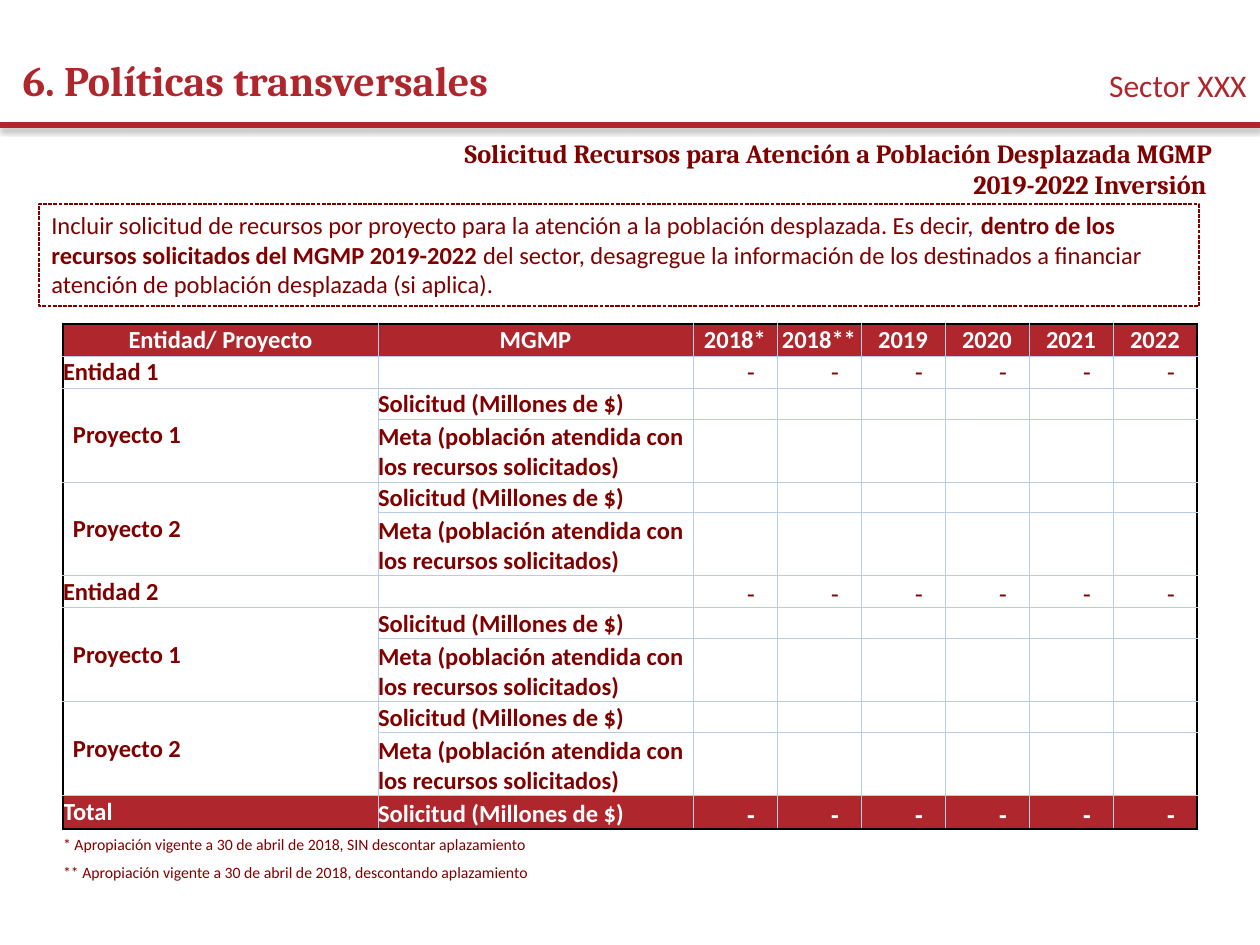
from dataclasses import dataclass

from lxml import etree
from pptx import Presentation
from pptx.dml.color import RGBColor
from pptx.enum.dml import MSO_LINE
from pptx.enum.shapes import MSO_CONNECTOR, MSO_SHAPE
from pptx.enum.text import MSO_ANCHOR, PP_ALIGN
from pptx.oxml.ns import qn
from pptx.util import Emu, Pt

LEFT, CENTER, RIGHT = PP_ALIGN.LEFT, PP_ALIGN.CENTER, PP_ALIGN.RIGHT
TOP, MIDDLE, BOTTOM = MSO_ANCHOR.TOP, MSO_ANCHOR.MIDDLE, MSO_ANCHOR.BOTTOM
DASH = MSO_LINE.SQUARE_DOT
STRAIGHT, RECT = MSO_CONNECTOR.STRAIGHT, MSO_SHAPE.RECTANGLE


@dataclass(frozen=True)
class Theme:
    red: str = "AF272D"
    maroon: str = "800000"
    white: str = "FFFFFF"
    grid: str = "B8CCE4"
    frame: str = "000000"
    heading: str = "Cambria"
    body: str = "Calibri"
    figures: str = "Arial"
    title: int = 24
    sector: int = 18
    subtitle: int = 15
    text: int = 14
    note: int = 9


T = Theme()


@dataclass(frozen=True)
class Style:
    size: int = T.text
    font: str = T.body
    color: str = T.maroon
    bold: bool = False


@dataclass(frozen=True)
class Cell:
    text: str = ""
    style: Style = Style(bold=True)
    align: PP_ALIGN = LEFT
    anchor: MSO_ANCHOR = MIDDLE
    indent: int = 0
    fill: str | None = None


@dataclass(frozen=True)
class Row:
    height: int
    cells: list[Cell]
    framed: bool = True


def px(n: int) -> Emu:
    return Emu(round(n * 914400 / 126))


def rgb(color: str) -> RGBColor:
    return RGBColor.from_string(color)


def add_run(p, text: str, style: Style) -> None:
    r = p.add_run()
    r.text = text
    r.font.size = Pt(style.size)
    r.font.name = style.font
    r.font.bold = style.bold
    r.font.color.rgb = rgb(style.color)


def fill_text(sp, runs: list[tuple[str, Style]], align: PP_ALIGN, anchor: MSO_ANCHOR) -> None:
    tf = sp.text_frame
    tf.word_wrap = True
    tf.vertical_anchor = anchor
    p = tf.paragraphs[0]
    p.alignment = align
    for text, style in runs:
        add_run(p, text, style)


def add_border(tc_pr, side: str, color: str | None, width: float) -> None:
    ln = etree.SubElement(tc_pr, qn(f"a:ln{side}"), w=str(Pt(width)))
    if color is None:
        etree.SubElement(ln, qn("a:noFill"))
    else:
        solid = etree.SubElement(ln, qn("a:solidFill"))
        etree.SubElement(solid, qn("a:srgbClr"), val=color)


def draw_cell(cell, data: Cell, frame_sides: str, framed: bool) -> None:
    cell.margin_left = px(data.indent)
    cell.margin_right = cell.margin_top = cell.margin_bottom = 0
    cell.vertical_anchor = data.anchor
    p = cell.text_frame.paragraphs[0]
    p.alignment = data.align
    if data.text:
        add_run(p, data.text, data.style)
    else:
        etree.SubElement(p._p, qn("a:endParaRPr"), sz=str(data.style.size * 100))
    tc_pr = cell._tc.get_or_add_tcPr()
    for side in "LRTB":
        if side in frame_sides:
            add_border(tc_pr, side, T.frame, 1)
        else:
            add_border(tc_pr, side, T.grid if framed else None, 0.5)
    if data.fill:
        cell.fill.solid()
        cell.fill.fore_color.rgb = rgb(data.fill)
    else:
        cell.fill.background()


def draw_table(s, x: int, y: int, widths: list[int], rows: list[Row]) -> None:
    table = s.shapes.add_table(len(rows), len(widths), px(x), px(y), px(sum(widths)),
                               px(sum(row.height for row in rows))).table
    table.first_row = table.horz_banding = False
    for col, width in zip(table.columns, widths):
        col.width = px(width)
    last = sum(row.framed for row in rows) - 1
    for i, row in enumerate(rows):
        table.rows[i].height = px(row.height)
        for j, data in enumerate(row.cells):
            sides = ""
            if row.framed:
                sides += "L" if j == 0 else ""
                sides += "R" if j == len(widths) - 1 else ""
            sides += "T" if i in (0, last + 1) else ""
            sides += "B" if i == last else ""
            draw_cell(table.cell(i, j), data, sides, row.framed)
        # Projects span their two rows, notes span the two wide columns
        if row.cells[0].text.startswith("Proyecto"):
            table.cell(i, 0).merge(table.cell(i + 1, 0))
        elif not row.framed:
            table.cell(i, 0).merge(table.cell(i, 1))


# Table content
YEARS = ["2018*", "2018**", "2019", "2020", "2021", "2022"]
N = len(YEARS)
REQUEST = "Solicitud (Millones de $)"
GOAL = "Meta (población atendida con los recursos solicitados)"
HEAD = Style(color=T.white, bold=True)


def dashes(anchor: MSO_ANCHOR, style: Style, fill: str | None = None) -> list[Cell]:
    return [Cell("-", style, anchor=anchor, indent=54, fill=fill)] * N


def entity_rows(name: str, anchor: MSO_ANCHOR) -> list[Row]:
    rows = [Row(32, [Cell(name), Cell()] + dashes(anchor, Style(font=T.figures)))]
    for project in ("Proyecto 1", "Proyecto 2"):
        rows.append(Row(31, [Cell(project, indent=10), Cell(REQUEST, anchor=BOTTOM)] + [Cell()] * N))
        rows.append(Row(63, [Cell(), Cell(GOAL, anchor=BOTTOM)] + [Cell()] * N))
    return rows


def note_row(text: str, height: int) -> Row:
    note = Style(size=T.note)
    return Row(height, [Cell(text, note)] + [Cell(style=note)] * (N + 1), framed=False)


def table_rows() -> list[Row]:
    header = [Cell(t, HEAD, CENTER, fill=T.red) for t in ["Entidad/ Proyecto", "MGMP"] + YEARS]
    total = [Cell("Total", HEAD, fill=T.red), Cell(REQUEST, HEAD, anchor=BOTTOM, fill=T.red)]
    total += dashes(BOTTOM, Style(font=T.figures, color=T.white, bold=True), T.red)
    return [
        Row(32, header),
        *entity_rows("Entidad 1", MIDDLE),
        *entity_rows("Entidad 2", BOTTOM),
        Row(33, total),
        note_row("* Apropiación vigente a 30 de abril de 2018, SIN descontar aplazamiento", 33),
        note_row("** Apropiación vigente a 30 de abril de 2018, descontando aplazamiento", 23),
    ]


def main() -> None:
    prs = Presentation()
    prs.slide_width, prs.slide_height = px(1260), px(945)
    s = prs.slides.add_slide(prs.slide_layouts[5])

    # Header rule with soft shadow
    rule = s.shapes.add_connector(STRAIGHT, 0, px(125), px(1260), px(125))
    rule.line.color.rgb = rgb(T.red)
    rule.line.width = Pt(3)
    effects = etree.SubElement(rule._element.spPr, qn("a:effectLst"))
    shadow = etree.SubElement(effects, qn("a:outerShdw"), blurRad=str(Pt(3.1)),
                              dist=str(Pt(1.8)), dir="5400000", rotWithShape="0")
    black = etree.SubElement(shadow, qn("a:srgbClr"), val=T.frame)
    etree.SubElement(black, qn("a:alpha"), val="35000")

    # Instructions box
    box = s.shapes.add_shape(RECT, px(39), px(204), px(1160), px(102))
    box.shadow.inherit = False
    box.fill.background()
    box.line.color.rgb = rgb(T.maroon)
    box.line.width = Pt(0.75)
    box.line.dash_style = DASH
    fill_text(box, [
        ("Incluir solicitud de recursos por proyecto para la atención a la población "
         "desplazada. Es decir, ", Style()),
        ("dentro de los recursos solicitados del MGMP 2019-2022", Style(bold=True)),
        (" del sector, desagregue la información de los destinados a financiar atención "
         "de población desplazada (si aplica).", Style()),
    ], LEFT, TOP)

    # Title, sector and subtitle
    title = s.shapes.title
    title.left, title.top, title.width, title.height = px(10), px(45), px(1046), px(69)
    fill_text(title, [("6. Políticas transversales", Style(T.title, T.heading, T.red, True))],
              LEFT, MIDDLE)
    sector = s.shapes.add_textbox(px(892), px(60), px(367), px(50))
    fill_text(sector, [("Sector XXX", Style(T.sector, color=T.red))], RIGHT, TOP)
    subtitle = s.shapes.add_textbox(px(441), px(144), px(784), px(49))
    fill_text(subtitle, [("Solicitud Recursos para Atención a Población Desplazada MGMP "
                          "2019-2022 Inversión ", Style(T.subtitle, T.heading, bold=True))],
              RIGHT, MIDDLE)

    # Requests by entity and project
    draw_table(s, 63, 324, [315, 315] + [84] * N, table_rows())
    prs.save("out.pptx")


if __name__ == "__main__":
    main()
